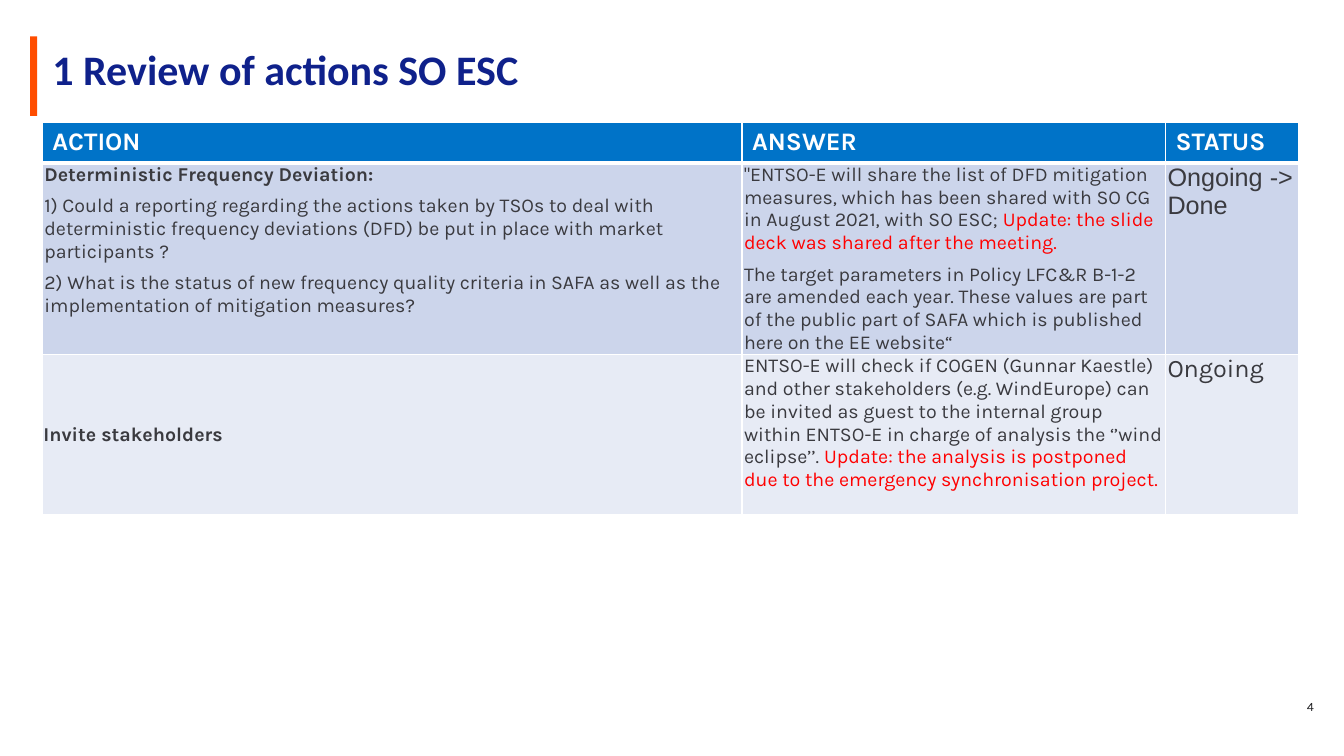
from lxml.etree import SubElement
from pptx import Presentation
from pptx.dml.color import RGBColor
from pptx.enum.shapes import MSO_SHAPE as Shape
from pptx.enum.text import MSO_ANCHOR as Anchor, MSO_AUTO_SIZE as AutoSize, PP_ALIGN as Align
from pptx.oxml.ns import qn
from pptx.util import Inches, Pt

NAVY = RGBColor(0x0F, 0x21, 0x8B)
ORANGE = RGBColor(0xFF, 0x4D, 0x00)
BLUE = RGBColor(0x00, 0x73, 0xC8)
LIGHT_BLUE = RGBColor(0xCC, 0xD5, 0xEB)
PALE_BLUE = RGBColor(0xE7, 0xEB, 0xF5)
GREY = RGBColor(0x3A, 0x3A, 0x3F)
BLACK = RGBColor(0x1D, 0x1D, 0x20)
RED = RGBColor(0xFF, 0x00, 0x00)
WHITE = RGBColor(0xFF, 0xFF, 0xFF)

COLUMN_WIDTHS = [6.94, 4.2, 1.32]
ROW_HEIGHTS = [0.41, 1.89, 1.59]
HEADINGS = ["ACTION", "ANSWER", "STATUS"]

FREQUENCY_ACTION = [
    "1) Could a reporting regarding the actions taken by TSOs to deal with deterministic "
    "frequency deviations (DFD) be put in place with market participants ?",
    "2) What is the status of new frequency quality criteria in SAFA as well as the "
    "implementation of mitigation measures?",
]
FREQUENCY_ANSWER = (
    '"ENTSO-E will share the list of DFD mitigation measures, which has been shared '
    "with SO CG in August 2021, with SO ESC; "
)
FREQUENCY_UPDATE = "Update: the slide deck was shared after the meeting."
TARGET_PARAMETERS = (
    "The target parameters in Policy LFC&R B-1-2 are amended each year. These values are "
    "part of the public part of SAFA which is published here on the EE website“"
)
INVITE_ANSWER = (
    "ENTSO-E will check if COGEN (Gunnar Kaestle) and other stakeholders (e.g. WindEurope) "
    "can be invited as guest to the internal group within ENTSO-E in charge of analysis "
    "the ‘’wind eclipse’’. "
)
INVITE_UPDATE = (
    "Update: the analysis is postponed due to the emergency synchronisation project."
)


def write(paragraph, text, size=14, font="Karla", color=GREY, bold=False):
    """Append formatted text to a paragraph."""
    run = paragraph.add_run()
    run.text = text
    run.font.size = Pt(size)
    run.font.name = font
    run.font.bold = bold
    run.font.color.rgb = color


def set_insets(holder, left, top, right, bottom):
    holder.margin_left, holder.margin_top = Inches(left), Inches(top)
    holder.margin_right, holder.margin_bottom = Inches(right), Inches(bottom)


def set_borders(cell, bottom=1):
    properties = cell._tc.get_or_add_tcPr()
    widths = {"a:lnL": 1, "a:lnR": 1, "a:lnT": 1, "a:lnB": bottom}
    for position, (side, width) in enumerate(widths.items()):
        line = SubElement(properties, qn(side), w=str(Pt(width)))
        fill = SubElement(line, qn("a:solidFill"))
        SubElement(fill, qn("a:srgbClr"), val=str(WHITE))
        properties.insert(position, line)


def fill_cell(cell, paragraphs, fill, insets=None, anchor=Anchor.TOP, bottom=1):
    """Each paragraph is a list of (text, format) pairs."""
    cell.fill.solid()
    cell.fill.fore_color.rgb = fill
    cell.vertical_anchor = anchor
    if insets:
        set_insets(cell, *insets)
    set_borders(cell, bottom)
    frame = cell.text_frame
    for index, pieces in enumerate(paragraphs):
        paragraph = frame.add_paragraph() if index else frame.paragraphs[0]
        if index:
            paragraph.space_before = Pt(6)
        for text, style in pieces:
            write(paragraph, text, **style)


def add_title(slide):
    accent = slide.shapes.add_shape(
        Shape.RECTANGLE, Inches(0.3), Inches(0.36), Inches(0.07), Inches(0.79))
    accent.shadow.inherit = False
    accent.fill.solid()
    accent.fill.fore_color.rgb = ORANGE
    accent.line.fill.background()

    title = slide.shapes.title
    title.left, title.top = Inches(0.42), Inches(0.51)
    title.width, title.height = Inches(12.71), Inches(0.39)
    frame = title.text_frame
    frame.auto_size = AutoSize.NONE
    frame.vertical_anchor = Anchor.MIDDLE
    heading = frame.paragraphs[0]
    heading.alignment = Align.LEFT
    heading.line_spacing = Pt(32)
    write(heading, "1 Review of actions SO ESC", size=30, font="Calibri", color=NAVY, bold=True)


def add_page_number(slide):
    box = slide.shapes.add_textbox(Inches(6.75), Inches(6.82), Inches(6.38), Inches(0.4))
    frame = box.text_frame
    frame.word_wrap = True
    frame.vertical_anchor = Anchor.MIDDLE
    number = frame.paragraphs[0]
    number.alignment = Align.RIGHT
    number.line_spacing = Pt(9)
    write(number, "4", size=9, color=BLACK)


def add_actions_table(slide):
    table = slide.shapes.add_table(
        len(ROW_HEIGHTS), len(COLUMN_WIDTHS), Inches(0.42), Inches(1.21),
        Inches(sum(COLUMN_WIDTHS)), Inches(sum(ROW_HEIGHTS))).table
    for column, width in zip(table.columns, COLUMN_WIDTHS):
        column.width = Inches(width)
    for row, height in zip(table.rows, ROW_HEIGHTS):
        row.height = Inches(height)

    # Header row
    header = {"size": 18, "color": WHITE, "bold": True}
    for column, heading in enumerate(HEADINGS):
        fill_cell(table.cell(0, column), [[(heading, header)]], BLUE, bottom=3)

    # Frequency deviation and stakeholder rows
    bold, update = {"bold": True}, {"color": RED}
    tight = (0.02, 0, 0.02, 0)
    frequency_row = [
        [[("Deterministic Frequency Deviation:", bold)],
         *[[(question, {})] for question in FREQUENCY_ACTION]],
        [[(FREQUENCY_ANSWER, {}), (FREQUENCY_UPDATE, update)], [(TARGET_PARAMETERS, {})]],
        [[("Ongoing -> Done", {"size": 18, "font": "Arial"})]],
    ]
    for column, paragraphs in enumerate(frequency_row):
        fill_cell(table.cell(1, column), paragraphs, LIGHT_BLUE, tight)

    fill_cell(table.cell(2, 0), [[("Invite stakeholders", bold)]], PALE_BLUE,
              (0.01, 0.01, 0.01, 0), Anchor.MIDDLE)
    fill_cell(table.cell(2, 1), [[(INVITE_ANSWER, {}), (INVITE_UPDATE, update)]],
              PALE_BLUE, tight)
    fill_cell(table.cell(2, 2), [[("Ongoing", {"size": 18})]], PALE_BLUE, tight)


def main():
    deck = Presentation()
    deck.slide_width, deck.slide_height = Inches(13.33), Inches(7.5)
    slide = deck.slides.add_slide(deck.slide_layouts[5])
    add_title(slide)
    add_actions_table(slide)
    add_page_number(slide)
    deck.save("out.pptx")


if __name__ == "__main__":
    main()
